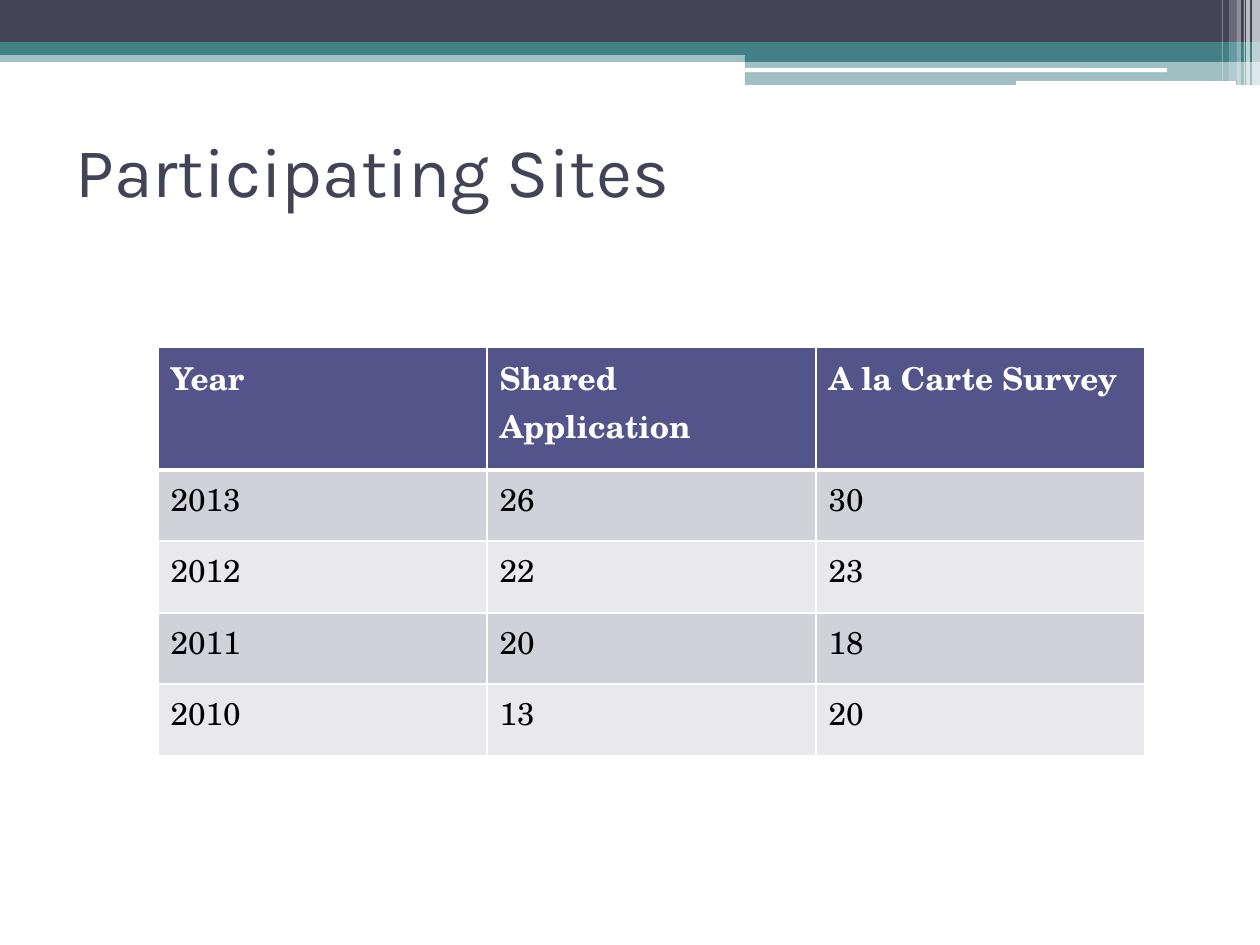
from lxml import etree
from pptx import Presentation
from pptx.dml.color import RGBColor
from pptx.enum.shapes import MSO_SHAPE
from pptx.enum.text import MSO_ANCHOR
from pptx.oxml.ns import qn
from pptx.util import Emu, Pt

RECT = MSO_SHAPE.RECTANGLE
ROUND = MSO_SHAPE.ROUNDED_RECTANGLE
MIDDLE = MSO_ANCHOR.MIDDLE

INK, TEAL, WHITE, BLACK = "424456", "438086", "FFFFFF", "000000"
HEAD, BANDS = "53548A", ("D1D1DA", "E9E9ED")


def px(n):
    return Emu(round(n * 914400 / 126))


def rgb(code):
    return RGBColor.from_string(code)


class Deck:
    title_font = "Karla"
    body_font = "TeX Gyre Schola"

    def __init__(self):
        self.prs = Presentation()
        self.prs.slide_width, self.prs.slide_height = px(1260), px(945)
        self.slide = self.prs.slides.add_slide(self.prs.slide_layouts[6])

    def style(self, par, name, size, color, bold=False):
        font = par.font
        font.name, font.size, font.bold = name, Pt(size), bold
        font.color.rgb = rgb(color)

    def bar(self, x, y, w, h, color, alpha=100, kind=RECT):
        shape = self.slide.shapes.add_shape(kind, px(x), px(y), px(w), px(h))
        shape.shadow.inherit = False
        shape.line.fill.background()
        shape.fill.solid()
        shape.fill.fore_color.rgb = rgb(color)
        if alpha < 100:
            tone = shape.fill._xPr.find(".//" + qn("a:srgbClr"))
            etree.SubElement(tone, qn("a:alpha"), val=str(alpha * 1000))

    def title(self, text, x, y, w, h):
        box = self.slide.shapes.add_textbox(px(x), px(y), px(w), px(h))
        frame = box.text_frame
        frame.word_wrap = True
        frame.vertical_anchor = MIDDLE
        frame.text = text
        self.style(frame.paragraphs[0], self.title_font, 40, INK)

    def edges(self, cell, top, bottom):
        props = cell._tc.get_or_add_tcPr()
        sides = (("L", 1), ("R", 1), ("T", top), ("B", bottom))
        for i, (side, width) in enumerate(sides):
            line = etree.Element(qn("a:ln" + side), w=str(Pt(width)))
            fill = etree.SubElement(line, qn("a:solidFill"))
            etree.SubElement(fill, qn("a:srgbClr"), val=WHITE)
            props.insert(i, line)

    def table(self, rows, x, y, widths, heights):
        table = self.slide.shapes.add_table(
            len(rows), len(widths), px(x), px(y),
            px(sum(widths)), px(sum(heights))).table
        for col, width in zip(table.columns, widths):
            col.width = px(width)
        for r, (row, height) in enumerate(zip(rows, heights)):
            table.rows[r].height = px(height)
            head = r == 0
            for c, text in enumerate(row):
                cell = table.cell(r, c)
                cell.text = text
                cell.fill.solid()
                cell.fill.fore_color.rgb = rgb(HEAD if head else BANDS[(r - 1) % 2])
                self.style(cell.text_frame.paragraphs[0], self.body_font, 18,
                           WHITE if head else BLACK, head)
                self.edges(cell, 3 if r == 1 else 1, 3 if head else 1)


def main():
    deck = Deck()

    # Header bands
    deck.bar(0, 50, 1260, 12, TEAL, 50)
    deck.bar(0, 0, 1260, 42, INK)
    deck.bar(0, 42, 1260, 13, TEAL)
    deck.bar(745, 49, 515, 13, TEAL)
    deck.bar(745, 61, 515, 24, TEAL, 50)

    # White rules
    deck.bar(745, 68, 422, 4, WHITE, kind=ROUND)
    deck.bar(1016, 81, 220, 5, WHITE, kind=ROUND)

    # Stripes at the right edge: left, width, height, opacity
    for x, w, h, alpha in ((1252, 8, 85, 65), (1246, 4, 85, 65), (1244, 1, 85, 60),
                           (1237, 4, 85, 40), (1229, 8, 81, 20), (1222, 1, 81, 30)):
        deck.bar(x, 0, w, h, WHITE, alpha)

    # Title and table
    deck.title("Participating Sites", 63, 116, 1134, 107)
    rows = (("Year", "Shared Application", "A la Carte Survey"),
            ("2013", "26", "30"),
            ("2012", "22", "23"),
            ("2011", "20", "18"),
            ("2010", "13", "20"))
    deck.table(rows, 158, 347, [329] * 3, [123] + [71, 72] * 2)

    deck.prs.save("out.pptx")


if __name__ == "__main__":
    main()
